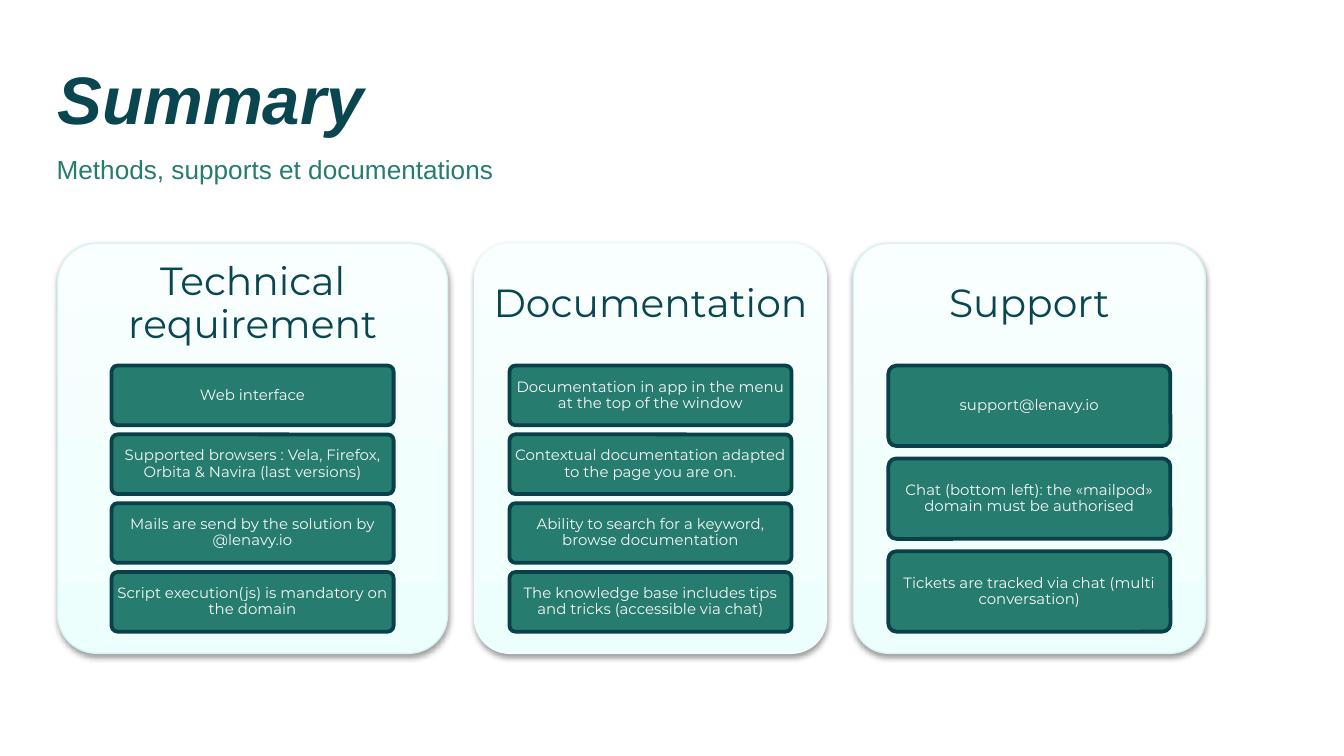
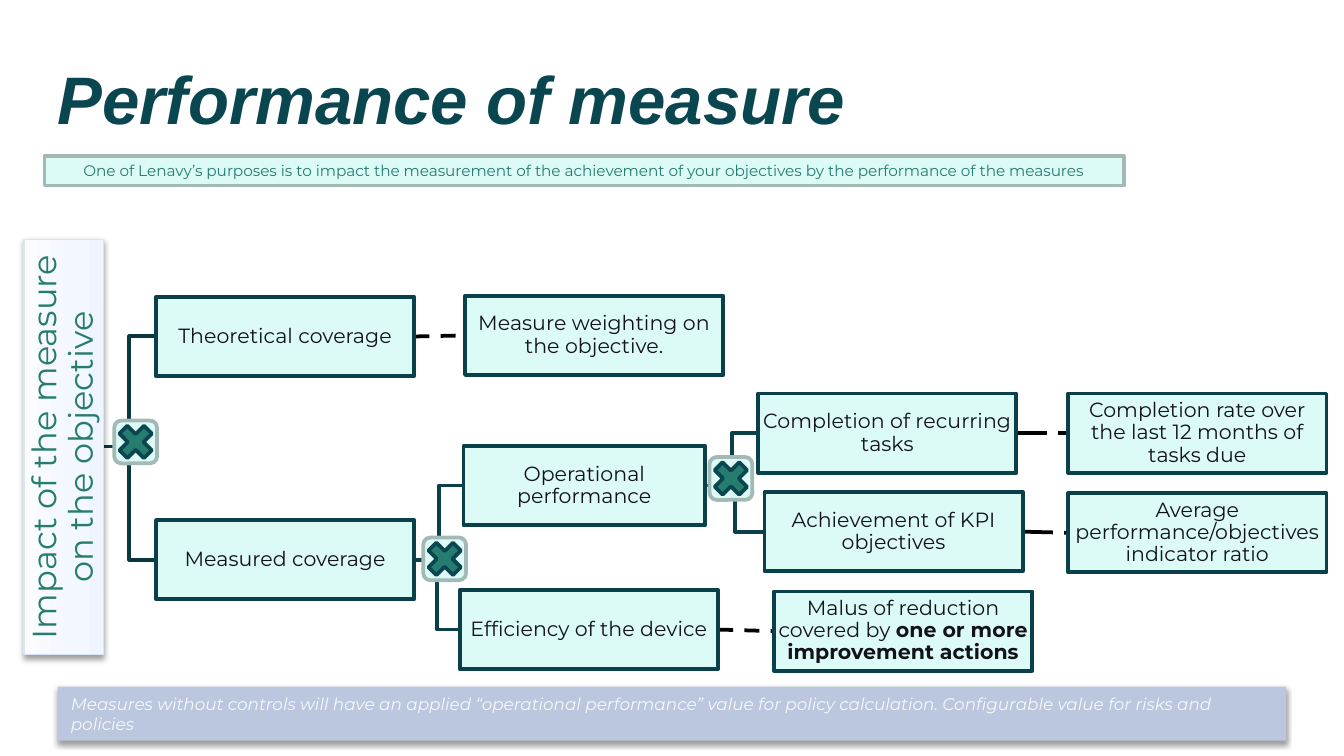
import pptx
import pptx.util
from lxml import etree
from pptx.dml.color import RGBColor
from pptx.enum.dml import MSO_LINE
from pptx.enum.shapes import MSO_CONNECTOR, MSO_SHAPE
from pptx.enum.text import MSO_ANCHOR, MSO_AUTO_SIZE, PP_ALIGN
from pptx.oxml.ns import qn
from pptx.util import Cm

COLORS = {
    "title": "0A4650",
    "green": "267C6E",
    "border": "094049",
    "trunk": "083840",
    "mint": "DCFAF6",
    "sage": "A3B9B6",
    "ink": "12121B",
    "light": "F8F8F8",
    "black": "000000",
    "note": "BAC7DF",
    "card_line": "D6F5F1",
    "card_line_pale": "F2FFFF",
    "root_line": "D8E5F9",
}
CARD_GRADIENT = ((0, "ECFFFC"), (35, "F1FFFD"), (100, "F9FFFE"))
ROOT_GRADIENT = ((0, "EFF5FF"), (35, "F3F7FF"), (100, "FAFCFF"))


def color(name):
    return RGBColor.from_string(COLORS[name])


def write(shape, text, *, size, ink, font="Montserrat", bold=False, italic=False,
          align=PP_ALIGN.CENTER, anchor=MSO_ANCHOR.MIDDLE, margin=None, spacing=1.0,
          bullet=True):
    """Fill a shape with one paragraph; a tuple of texts alternates plain and bold."""
    frame = shape.text_frame
    frame.word_wrap = True
    frame.auto_size = MSO_AUTO_SIZE.NONE
    frame.vertical_anchor = anchor
    if margin is not None:
        frame.margin_left = frame.margin_right = Cm(margin)
        frame.margin_top = frame.margin_bottom = Cm(margin)
    paragraph = frame.paragraphs[0]
    paragraph.alignment = align
    paragraph.line_spacing = spacing
    paragraph.space_before = pptx.util.Pt(0)
    if not bullet:
        properties = paragraph._p.get_or_add_pPr()
        properties.set("marL", "0")
        properties.set("indent", "0")
        etree.SubElement(properties, qn("a:buNone"))
    for index, part in enumerate((text,) if isinstance(text, str) else text):
        run = paragraph.add_run()
        run.text = part
        run.font.name = font
        run.font.size = pptx.util.Pt(size)
        run.font.bold = bold or index % 2 == 1
        run.font.italic = italic
        run.font.color.rgb = color(ink)


class Deck:
    """The presentation, its style and the slide being built."""

    def __init__(self):
        self.presentation = pptx.Presentation()
        self.presentation.slide_width = Cm(25.4)
        self.presentation.slide_height = Cm(14.29)
        self.slide = None

    def add_slide(self, title, layout):
        self.slide = self.presentation.slides.add_slide(
            self.presentation.slide_layouts.get_by_name(layout))
        self.placeholder(0, title, (1.09, 0.94, 21.44, 1.8), size=36, ink="title",
                         bold=True, italic=True)

    def placeholder(self, index, text, place, **style):
        shape = self.slide.placeholders[index]
        shape.left, shape.top, shape.width, shape.height = map(Cm, place)
        write(shape, text, font="Arial", align=PP_ALIGN.LEFT, margin=0, **style)

    def shape(self, kind, place, fill, line=None, weight=2, corner=None, shadow=False):
        """Add a preset shape; fill is a colour name or a tuple of gradient stops."""
        shape = self.slide.shapes.add_shape(kind, *map(Cm, place))
        shape.shadow.inherit = False
        if corner is not None:
            shape.adjustments[0] = corner
        if isinstance(fill, str):
            shape.fill.solid()
            shape.fill.fore_color.rgb = color(fill)
        else:
            self.gradient(shape, fill)
        if line:
            shape.line.color.rgb = color(line)
            shape.line.width = pptx.util.Pt(weight)
        else:
            shape.line.fill.background()
        if shadow:
            self.drop_shadow(shape)
        return shape

    def gradient(self, shape, stops):
        shape.fill.gradient()
        shape.fill.gradient_angle = 90
        stop_list = shape.element.spPr.find(".//" + qn("a:gsLst"))
        for old_stop in list(stop_list):
            stop_list.remove(old_stop)
        for position, value in stops:
            stop = etree.SubElement(stop_list, qn("a:gs"), pos=str(position * 1000))
            etree.SubElement(stop, qn("a:srgbClr"), val=value)

    def drop_shadow(self, shape):
        effects = shape.element.spPr.find(qn("a:effectLst"))
        outer = etree.SubElement(
            effects, qn("a:outerShdw"), blurRad=str(pptx.util.Pt(3.1)),
            dist=str(pptx.util.Pt(1.6)), dir="5400000", rotWithShape="0")
        tint = etree.SubElement(outer, qn("a:srgbClr"), val=COLORS["black"])
        etree.SubElement(tint, qn("a:alpha"), val="38000")

    def text(self, text, place, **style):
        write(self.slide.shapes.add_textbox(*map(Cm, place)), text, **style)

    def link(self, start, end, line, dash=None):
        """Join two points: an elbow when solid, a straight line when dashed."""
        kind = MSO_CONNECTOR.STRAIGHT if dash else MSO_CONNECTOR.ELBOW
        connector = self.slide.shapes.add_connector(kind, *map(Cm, start + end))
        connector.line.color.rgb = color(line)
        connector.line.width = pptx.util.Pt(2)
        if dash:
            connector.line.dash_style = dash
        etree.SubElement(connector.element.spPr, qn("a:effectLst"))

    def card(self, left, width, heading, items, line):
        top, item_top, item_width, items_height = 4.6, 6.91, 5.33, 5.03
        self.shape(MSO_SHAPE.ROUNDED_RECTANGLE, (left, top, width, 7.75), CARD_GRADIENT,
                   line, weight=0.75, corner=0.1, shadow=True)
        self.text(heading, (left, top, width, item_top - top), size=21, ink="title",
                  margin=0.23, spacing=0.9)
        gap_share = 0.154
        height = items_height / (len(items) + gap_share * (len(items) - 1))
        for row, item in enumerate(items):
            place = (left + (width - item_width) / 2,
                     item_top + row * height * (1 + gap_share), item_width, height)
            pill = self.shape(MSO_SHAPE.ROUNDED_RECTANGLE, place, "green", "border",
                              corner=0.1)
            write(pill, item, size=8, ink="light", margin=0.05, spacing=0.9)

    def times_badge(self, left, top):
        self.shape(MSO_SHAPE.ROUNDED_RECTANGLE, (left, top, 0.81, 0.81), "mint", "sage")
        self.shape(MSO_SHAPE.MATH_MULTIPLY, (left - 0.04, top - 0.04, 0.89, 0.89),
                   "green", "title")


def build_summary(deck):
    deck.add_slide("Summary", "Title and Content")
    deck.placeholder(1, "Methods, supports et documentations", (1.07, 2.9, 10.85, 9.22),
                     size=14, ink="green", anchor=MSO_ANCHOR.TOP, bullet=False)
    cards = (
        ("Technical requirement", 7.37, "card_line", (
            "Web interface",
            "Supported browsers : Vela, Firefox, Orbita & Navira (last versions)",
            "Mails are send by the solution by @lenavy.io",
            "Script execution(js) is mandatory on the domain")),
        ("Documentation", 6.65, "card_line_pale", (
            "Documentation in app in the menu at the top of the window",
            "Contextual documentation adapted to the page you are on.",
            "Ability to search for a keyword, browse documentation",
            "The knowledge base includes tips and tricks (accessible via chat)")),
        ("Support", 6.65, "card_line", (
            "support@lenavy.io",
            "Chat (bottom left): the «mailpod» domain must be authorised",
            "Tickets are tracked via chat (multi conversation)")),
    )
    left = 1.09
    for heading, width, line, items in cards:
        deck.card(left, width, heading, items, line)
        left += width + 0.51


def build_performance(deck):
    deck.add_slide("Performance of measure", "Title Only")
    banner = deck.shape(MSO_SHAPE.RECTANGLE, (0.84, 2.95, 20.4, 0.56), "mint", "sage")
    write(banner, "One of Lenavy’s purposes is to impact the measurement of the achievement "
          "of your objectives by the performance of the measures", size=8.2, ink="green")

    box_width, box_height = 4.88, 1.5
    boxes = {
        "theoretical": (2.95, 5.61, box_width, "Theoretical coverage"),
        "weighting": (8.79, 5.59, box_width, "Measure weighting on the objective."),
        "measured": (2.95, 9.83, box_width, "Measured coverage"),
        "operational": (8.76, 8.43, 4.57, "Operational performance"),
        "recurring": (14.33, 7.44, box_width, "Completion of recurring tasks"),
        "rate": (20.19, 7.44, box_width,
                 "Completion rate over the last 12 months of tasks due"),
        "kpi": (14.45, 9.3, box_width, "Achievement of KPI objectives"),
        "ratio": (20.19, 9.32, box_width,
                  "Average performance/objectives indicator ratio"),
        "efficiency": (8.69, 11.15, box_width, "Efficiency of the device"),
        "malus": (14.63, 11.18, box_width,
                  ("Malus of reduction covered by ", "one or more improvement actions")),
    }
    links = (
        ("efficiency", "malus", "black", MSO_LINE.DASH),
        ("measured", "efficiency", "border", None),
        ("kpi", "ratio", "black", MSO_LINE.LONG_DASH),
        ("operational", "kpi", "border", None),
        ("recurring", "rate", "black", MSO_LINE.LONG_DASH),
        ("operational", "recurring", "border", None),
        ("measured", "operational", "border", None),
        ("root", "measured", "trunk", None),
        ("theoretical", "weighting", "black", MSO_LINE.DASH),
        ("root", "theoretical", "trunk", None),
    )
    exits = {name: (left + width, top + box_height / 2)
             for name, (left, top, width, _) in boxes.items()}
    exits["root"] = (1.94, 8.44)
    for source, target, line, dash in links:
        left, top = boxes[target][:2]
        deck.link(exits[source], (left, top + box_height / 2), line, dash)

    root = deck.shape(MSO_SHAPE.RECTANGLE, (-2.72, 7.7, 7.85, box_height), ROOT_GRADIENT,
                      "root_line", weight=0.75, shadow=True)
    root.rotation = 270
    write(root, "Impact of the measure on the objective", size=18, ink="green",
          margin=0.03, spacing=0.9)
    for left, top, width, text in boxes.values():
        box = deck.shape(MSO_SHAPE.RECTANGLE, (left, top, width, box_height), "mint",
                         "border")
        write(box, text, size=11, ink="ink", margin=0.03, spacing=0.9)
    for left, top in ((2.16, 7.95), (8, 10.16), (13.41, 8.64)):
        deck.times_badge(left, top)

    note = deck.shape(MSO_SHAPE.RECTANGLE, (1.09, 12.98, 23.22, 1.02), "note", shadow=True)
    write(note, "Measures without controls will have an applied “operational performance” "
          "value for policy calculation. Configurable value for risks and policies",
          size=9, ink="light", italic=True, align=PP_ALIGN.LEFT)


def main():
    deck = Deck()
    build_summary(deck)
    build_performance(deck)
    deck.presentation.save("out.pptx")


if __name__ == "__main__":
    main()
